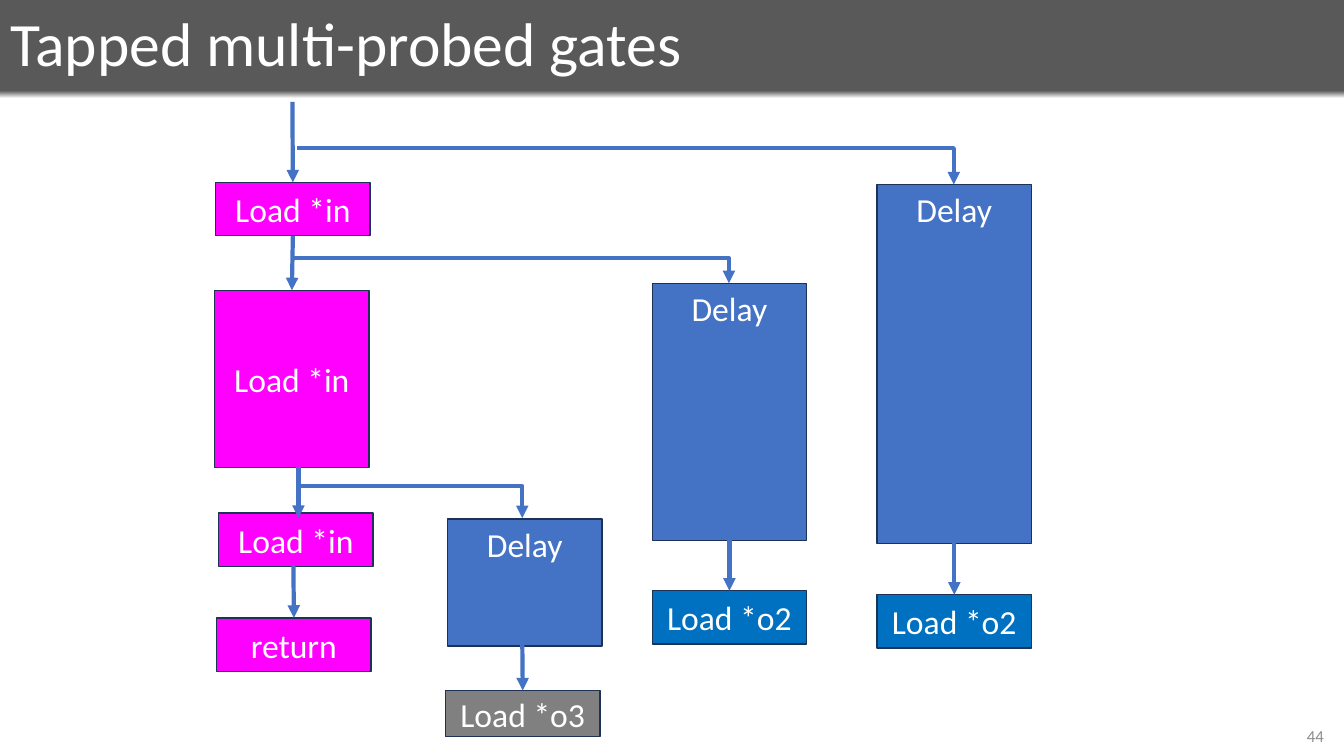
from copy import deepcopy

from pptx import Presentation
from pptx.dml.color import RGBColor
from pptx.enum.shapes import MSO_CONNECTOR, MSO_SHAPE
from pptx.enum.text import MSO_ANCHOR, MSO_AUTO_SIZE, PP_ALIGN
from pptx.oxml.ns import qn
from pptx.util import Inches, Pt

TOP, BOTTOM = 0, 2
WHITE, MAGENTA, BLUE, DEEP_BLUE = "FFFFFF", "FF00FF", "4472C4", "0070C0"
GRAY, DARK_GRAY, LIGHT_GRAY, OUTLINE = "808080", "595959", "8C8C8C", "1E3256"
BOX_WIDTH, BOX_HEIGHT = 15.3, 5.3


def color(value):
    return RGBColor.from_string(value)


def grid(*cells):
    """Turn columns and rows, each a tenth of an inch, into lengths."""
    return [Inches(cell / 10) for cell in cells]


class GateDiagram:
    font_name = "Calibri"

    def __init__(self, presentation):
        self.slide = presentation.slides.add_slide(presentation.slide_layouts[5])
        self.shapes = self.slide.shapes

    def background(self, stops):
        fill = self.slide.background.fill
        fill.gradient()
        fill.gradient_angle = 270
        stop_list = next(self.slide.element.iter(qn("a:gsLst")))
        while len(stop_list) < len(stops):
            stop_list.append(deepcopy(stop_list[0]))
        for stop, (position, value) in zip(fill.gradient_stops, stops):
            stop.position = position
            stop.color.rgb = color(value)

    def set_text(self, shape, text, size, value, alignment, anchor=MSO_ANCHOR.MIDDLE):
        frame = shape.text_frame
        frame.text = text
        frame.word_wrap = True
        frame.auto_size = MSO_AUTO_SIZE.NONE
        frame.vertical_anchor = anchor
        paragraph = frame.paragraphs[0]
        paragraph.alignment = alignment
        for run in paragraph.runs:
            run.font.name = self.font_name
            run.font.size = Pt(size)
            run.font.color.rgb = color(value)

    def title(self, text):
        title = self.shapes.title
        title.left, title.top, title.width, title.height = grid(0, 0, 132.3, 9.2)
        self.set_text(title, text, 44, WHITE, PP_ALIGN.LEFT)
        title.text_frame.paragraphs[0].line_spacing = 0.9

    def page_number(self, text):
        box = self.shapes.add_textbox(*grid(102.3, 71, 30, 4))
        self.set_text(box, text, 12, LIGHT_GRAY, PP_ALIGN.RIGHT)

    def box(self, text, column, row, fill, height=BOX_HEIGHT, anchor=MSO_ANCHOR.MIDDLE):
        box = self.shapes.add_shape(
            MSO_SHAPE.RECTANGLE, *grid(column, row, BOX_WIDTH, height))
        box.shadow.inherit = False
        box.fill.solid()
        box.fill.fore_color.rgb = color(fill)
        box.line.color.rgb = color(OUTLINE)
        box.line.width = Pt(1)
        self.set_text(box, text, 24, WHITE, PP_ALIGN.CENTER, anchor)
        return box

    def delay(self, column, row, height):
        return self.box("Delay", column, row, BLUE, height, MSO_ANCHOR.TOP)

    def output(self, text, column, row, fill, height=BOX_HEIGHT):
        box = self.box(text, column, row, fill, height)
        box.text_frame.margin_left = box.text_frame.margin_right = Inches(0.04)
        return box

    def style_arrow(self, arrow):
        arrow.line.color.rgb = color(BLUE)
        arrow.line.width = Pt(3)
        outline = next(arrow.element.iter(qn("a:ln")))
        outline.append(outline.makeelement(qn("a:tailEnd"), {"type": "triangle"}))

    def arrow(self, start=(0, 0), end=(0, 0), source=None, target=None):
        """Draw a straight arrow; source and target boxes override the points."""
        arrow = self.shapes.add_connector(MSO_CONNECTOR.STRAIGHT, *grid(*start, *end))
        if source:
            arrow.begin_connect(source, BOTTOM)
        if target:
            arrow.end_connect(target, TOP)
        self.style_arrow(arrow)
        properties = next(arrow.element.iter(qn("p:spPr")))
        properties.append(properties.makeelement(qn("a:effectLst"), {}))

    def branch(self, column, row, end_column, end_row):
        """Draw an arrow that runs right and then turns down."""
        start, *turns = [tuple(grid(*point)) for point in (
            (column, row), (end_column, row), (end_column, end_row))]
        builder = self.shapes.build_freeform(*start)
        builder.add_line_segments(turns, close=False)
        branch = builder.convert_to_shape()
        branch.shadow.inherit = False
        branch.fill.background()
        self.style_arrow(branch)


def main():
    presentation = Presentation()
    presentation.slide_width, presentation.slide_height = Inches(13.33), Inches(7.5)
    diagram = GateDiagram(presentation)
    diagram.background(
        [(0, DARK_GRAY), (0.12, DARK_GRAY), (0.13, WHITE), (1, WHITE)])
    diagram.title("Tapped multi-probed gates")
    diagram.page_number("44")

    first_load = diagram.box("Load *in", 21.4, 18.1, MAGENTA)
    second_load = diagram.box("Load *in", 21.3, 28.8, MAGENTA, 17.6)
    diagram.box("Load *in", 21.7, 50.9, MAGENTA)
    return_box = diagram.box("return", 21.5, 61.3, MAGENTA)

    diagram.delay(44.4, 51.5, 12.6)
    third_output = diagram.output("Load *o3", 44.2, 68.5, GRAY, 4.6)
    for column, row, height, output_row in (
            (64.7, 28.1, 25.5, 58.6), (87, 18.3, 35.6, 59)):
        delay = diagram.delay(column, row, height)
        output = diagram.output("Load *o2", column, output_row, DEEP_BLUE)
        diagram.arrow(source=delay, target=output)

    diagram.arrow(start=(29, 10.1), target=first_load)
    diagram.arrow(source=first_load, target=second_load)
    diagram.arrow(start=(29.6, 46.3), end=(29.6, 51.4))
    diagram.arrow(start=(29.1, 56.1), target=return_box)
    diagram.arrow(start=(51.8, 63.5), target=third_output)

    diagram.branch(29.5, 14.7, 94.6, 18.3)
    diagram.branch(29.1, 25.6, 72.3, 28.1)
    diagram.branch(29.5, 48.2, 51.8, 51.4)

    presentation.save("out.pptx")


if __name__ == "__main__":
    main()
